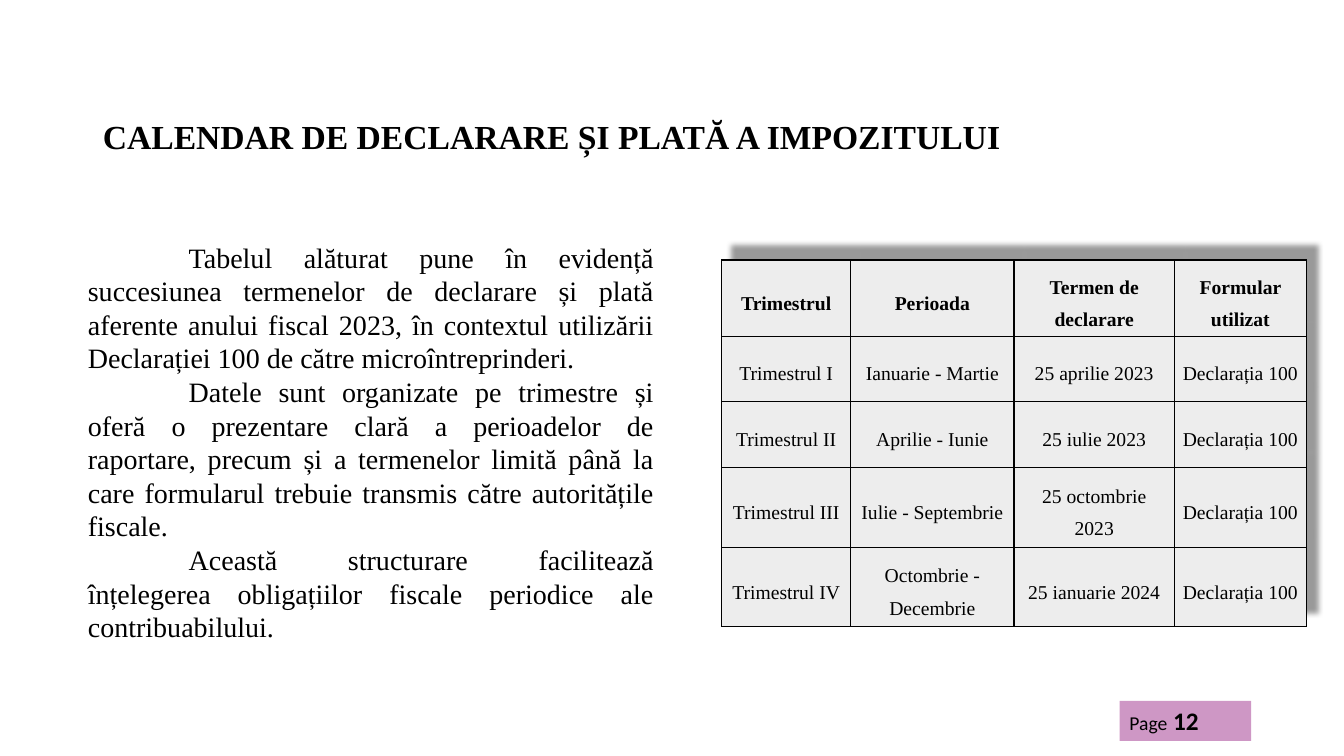
from lxml import etree
from pptx import Presentation
from pptx import util as u
from pptx.dml.color import RGBColor
from pptx.enum import shapes, text
from pptx.oxml import ns

WIDTH, HEIGHT = 13.33, 7.5
COLOURS = {"ink": "000000", "cell": "EDEDED", "badge": "9F318D"}
SERIF, SANS = "Times New Roman", "Calibri"
TITLE = "CALENDAR DE DECLARARE ȘI PLATĂ A IMPOZITULUI"
EXPLANATION = [
    "Tabelul alăturat pune în evidență succesiunea termenelor de declarare și plată "
    "aferente anului fiscal 2023, în contextul utilizării Declarației 100 de către "
    "microîntreprinderi.",
    "Datele sunt organizate pe trimestre și oferă o prezentare clară a perioadelor de "
    "raportare, precum și a termenelor limită până la care formularul trebuie transmis "
    "către autoritățile fiscale.",
    "Această structurare facilitează înțelegerea obligațiilor fiscale periodice ale "
    "contribuabilului.",
]
HEADINGS = ["Trimestrul", "Perioada", "Termen de declarare", "Formular utilizat"]
QUARTERS = [
    ("I", "Ianuarie - Martie", "25 aprilie 2023"),
    ("II", "Aprilie - Iunie", "25 iulie 2023"),
    ("III", "Iulie - Septembrie", "25 octombrie 2023"),
    ("IV", "Octombrie - Decembrie", "25 ianuarie 2024"),
]
COLUMN_WIDTHS = [1.28, 1.62, 1.59, 1.31]
ROW_HEIGHTS = [0.76, 0.64, 0.66, 0.79, 0.79]


def area(left, top, width, height):
    """Turn shares of the slide's size into lengths."""
    return [u.Inches(share * side) for share, side in
            zip((left, top, width, height), (WIDTH, HEIGHT) * 2)]


def add_child(parent, tag, **attributes):
    """Append a drawing element with the given attributes."""
    child = etree.SubElement(parent, ns.qn(tag))
    for name, value in attributes.items():
        child.set(name, str(value))
    return child


def style(span, size, face=SERIF, bold=False):
    """Set the font of a run."""
    span.font.size, span.font.name, span.font.bold = u.Pt(size), face, bold
    span.font.color.rgb = RGBColor.from_string(COLOURS["ink"])


def place_title(page, box):
    """Move and format the title placeholder."""
    title = page.shapes.title
    title.left, title.top, title.width, title.height = box
    frame = title.text_frame
    frame.text = TITLE
    frame.vertical_anchor = text.MSO_ANCHOR.MIDDLE
    para = frame.paragraphs[0]
    para.alignment, para.line_spacing = text.PP_ALIGN.LEFT, 0.9
    style(para.runs[0], 24, bold=True)


def place_explanation(page, box):
    """Write the justified paragraphs with an indented first line."""
    frame = page.shapes.add_textbox(*box).text_frame
    frame.word_wrap = True
    frame.text = "\n".join(EXPLANATION)
    for para in frame.paragraphs:
        para.alignment = text.PP_ALIGN.JUSTIFY
        properties = para._p.get_or_add_pPr()
        properties.set("marL", "0")
        properties.set("indent", str(u.Inches(1)))
        style(para.runs[0], 20)


def fill_cell(cell, wording, bold):
    """Write one bordered cell of the calendar."""
    cell.text = wording
    cell.vertical_anchor = text.MSO_ANCHOR.MIDDLE
    cell.margin_left = cell.margin_right = u.Inches(0.07)
    cell.margin_top = cell.margin_bottom = 0
    para = cell.text_frame.paragraphs[0]
    para.alignment, para.line_spacing = text.PP_ALIGN.CENTER, 1.5
    para.space_after = u.Pt(4)
    style(para.runs[0], 14, bold=bold)
    properties = cell._tc.get_or_add_tcPr()
    for side in "LRTB":
        line = add_child(properties, f"a:ln{side}", w=u.Pt(1))
        add_child(add_child(line, "a:solidFill"), "a:srgbClr", val=COLOURS["ink"])
    cell.fill.solid()
    cell.fill.fore_color.rgb = RGBColor.from_string(COLOURS["cell"])


def add_table_shadow(table):
    """Cast a soft shadow up and to the right of the table."""
    effects = etree.Element(ns.qn("a:effectLst"))
    table._tbl.tblPr.insert(0, effects)
    shadow = add_child(effects, "a:outerShdw", blurRad=u.Pt(4), dist=u.Inches(0.18),
                       dir=303 * 60000, algn="bl", rotWithShape=0)
    colour = add_child(shadow, "a:srgbClr", val=COLOURS["ink"])
    add_child(colour, "a:alpha", val=40000)


def place_calendar(page, box):
    """Build the table of quarters and deadlines."""
    rows = [HEADINGS] + [(f"Trimestrul {number}", period, deadline, "Declarația 100")
                         for number, period, deadline in QUARTERS]
    table = page.shapes.add_table(len(rows), len(HEADINGS), *box).table
    table.first_row = table.horz_banding = False
    for column, width in zip(table.columns, COLUMN_WIDTHS):
        column.width = u.Inches(width)
    for row, height in zip(table.rows, ROW_HEIGHTS):
        row.height = u.Inches(height)
    for index, wordings in enumerate(rows):
        for cell, wording in zip(table.rows[index].cells, wordings):
            fill_cell(cell, wording, bold=index == 0)
    add_table_shadow(table)


def place_page_badge(page, box):
    """Draw the translucent page number badge."""
    badge = page.shapes.add_shape(shapes.MSO_SHAPE.RECTANGLE, *box)
    badge.shadow.inherit = False
    badge.line.fill.background()
    badge.fill.solid()
    badge.fill.fore_color.rgb = RGBColor.from_string(COLOURS["badge"])
    colour = badge._element.spPr.find(".//" + ns.qn("a:srgbClr"))
    add_child(colour, "a:alpha", val=50000)
    para = badge.text_frame.paragraphs[0]
    para.alignment = text.PP_ALIGN.LEFT
    for wording, size, bold in (("Page", 14, False), (" 12", 18, True)):
        span = para.add_run()
        span.text = wording
        style(span, size, SANS, bold)


def main():
    """Build and save the deck."""
    deck = Presentation()
    deck.slide_width, deck.slide_height = u.Inches(WIDTH), u.Inches(HEIGHT)
    page = deck.slides.add_slide(deck.slide_layouts.get_by_name("Title Only"))
    place_title(page, area(0.069, 0.121, 0.863, 0.125))
    place_calendar(page, area(0.537, 0.344, 0.436, 0.485))
    place_page_badge(page, area(0.833, 0.927, 0.098, 0.053))
    place_explanation(page, area(0.058, 0.311, 0.436, 0.552))
    deck.save("out.pptx")


if __name__ == "__main__":
    main()
